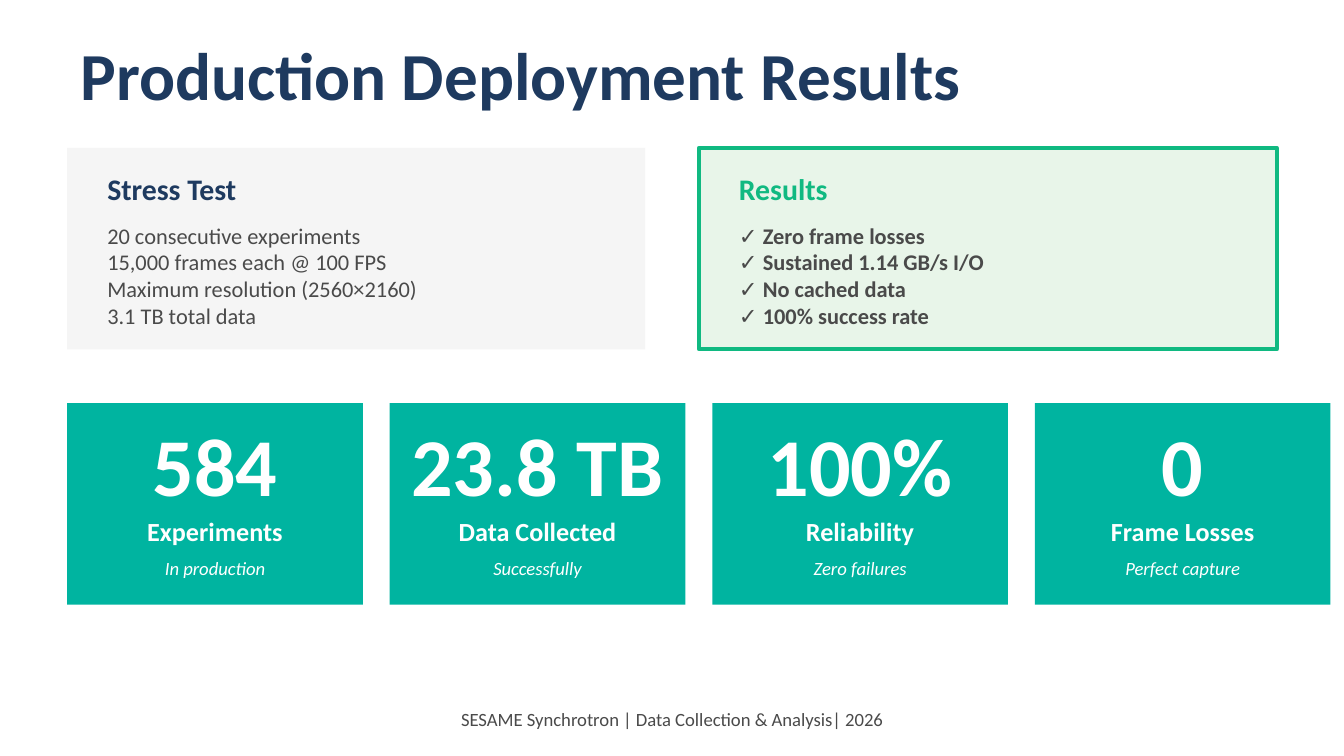
from pptx import Presentation
from pptx.dml.color import RGBColor
from pptx.enum.shapes import MSO_SHAPE
from pptx.enum.text import MSO_ANCHOR, PP_ALIGN
from pptx.util import Inches, Pt

RECTANGLE = MSO_SHAPE.RECTANGLE
MIDDLE = MSO_ANCHOR.MIDDLE
LEFT, CENTER = PP_ALIGN.LEFT, PP_ALIGN.CENTER

FONT = "Calibri"
COLORS = {
    "navy": "1E3A5F",
    "gray": "4A4A4A",
    "light": "F5F5F5",
    "mint": "E8F5E9",
    "green": "10B981",
    "teal": "00B4A0",
    "white": "FFFFFF",
}
SLIDE_WIDTH = 10
MARGIN = 0.5
CONTENT_WIDTH = 9
PANEL_TOP, PANEL_WIDTH, PANEL_STEP = 1.1, 4.3, 4.7
PANEL_PADDING = 0.2
CARD_TOP, CARD_WIDTH, CARD_STEP = 3, 2.2, 2.4
BLOCK_HEIGHT = 1.5

STRESS_TEST = [
    "20 consecutive experiments",
    "15,000 frames each @ 100 FPS",
    "Maximum resolution (2560×2160)",
    "3.1 TB total data",
]
RESULTS = [
    "✓ Zero frame losses",
    "✓ Sustained 1.14 GB/s I/O",
    "✓ No cached data",
    "✓ 100% success rate",
]
METRICS = [
    ("584", "Experiments", "In production"),
    ("23.8 TB", "Data Collected", "Successfully"),
    ("100%", "Reliability", "Zero failures"),
    ("0", "Frame Losses", "Perfect capture"),
]


def color(name):
    return RGBColor.from_string(COLORS[name])


def add_text(page, lines, left, top, width, height, size, ink,
             bold=False, italic=False, align=LEFT):
    box = page.shapes.add_textbox(Inches(left), Inches(top), Inches(width), Inches(height))
    frame = box.text_frame
    frame.word_wrap = True
    frame.vertical_anchor = MIDDLE
    frame.text = "\n".join(lines)
    for para in frame.paragraphs:
        para.alignment = align
        for span in para.runs:
            span.font.name = FONT
            span.font.size = Pt(size)
            span.font.bold = bold
            span.font.italic = italic
            span.font.color.rgb = color(ink)


def add_block(page, left, top, width, fill, border=None):
    block = page.shapes.add_shape(
        RECTANGLE, Inches(left), Inches(top), Inches(width), Inches(BLOCK_HEIGHT))
    block.shadow.inherit = False
    block.fill.solid()
    block.fill.fore_color.rgb = color(fill)
    if border:
        block.line.color.rgb = color(border)
        block.line.width = Pt(2)
    else:
        block.line.fill.background()


def add_panel(page, column, heading, lines, fill, ink, border=None, bold=False):
    left = MARGIN + column * PANEL_STEP
    text_left = left + PANEL_PADDING
    text_width = PANEL_WIDTH - 2 * PANEL_PADDING
    add_block(page, left, PANEL_TOP, PANEL_WIDTH, fill, border)
    add_text(page, [heading], text_left, PANEL_TOP + 0.15, text_width, 0.3, 16, ink, bold=True)
    add_text(page, lines, text_left, PANEL_TOP + 0.55, text_width, 0.8, 12, "gray", bold=bold)


def add_card(page, column, value, label, note):
    left = MARGIN + column * CARD_STEP
    add_block(page, left, CARD_TOP, CARD_WIDTH, "teal")
    add_text(page, [value], left, CARD_TOP + 0.15, CARD_WIDTH, 0.6, 44, "white",
             bold=True, align=CENTER)
    add_text(page, [label], left, CARD_TOP + 0.8, CARD_WIDTH, 0.3, 14, "white",
             bold=True, align=CENTER)
    add_text(page, [note], left, CARD_TOP + 1.1, CARD_WIDTH, 0.25, 10, "white",
             italic=True, align=CENTER)


def main():
    deck = Presentation()
    deck.slide_width = Inches(SLIDE_WIDTH)
    deck.slide_height = Inches(SLIDE_WIDTH * 9 / 16)
    page = deck.slides.add_slide(deck.slide_layouts[6])
    page.background.fill.solid()
    page.background.fill.fore_color.rgb = color("white")

    add_text(page, ["Production Deployment Results"], MARGIN, 0.3, CONTENT_WIDTH, 0.5,
             36, "navy", bold=True)
    add_panel(page, 0, "Stress Test", STRESS_TEST, "light", "navy")
    add_panel(page, 1, "Results", RESULTS, "mint", "green", border="green", bold=True)
    for column, metric in enumerate(METRICS):
        add_card(page, column, *metric)
    add_text(page, ["SESAME Synchrotron | Data Collection & Analysis| 2026"],
             MARGIN, 5.2, CONTENT_WIDTH, 0.3, 10, "gray", align=CENTER)
    deck.save("out.pptx")


if __name__ == "__main__":
    main()
